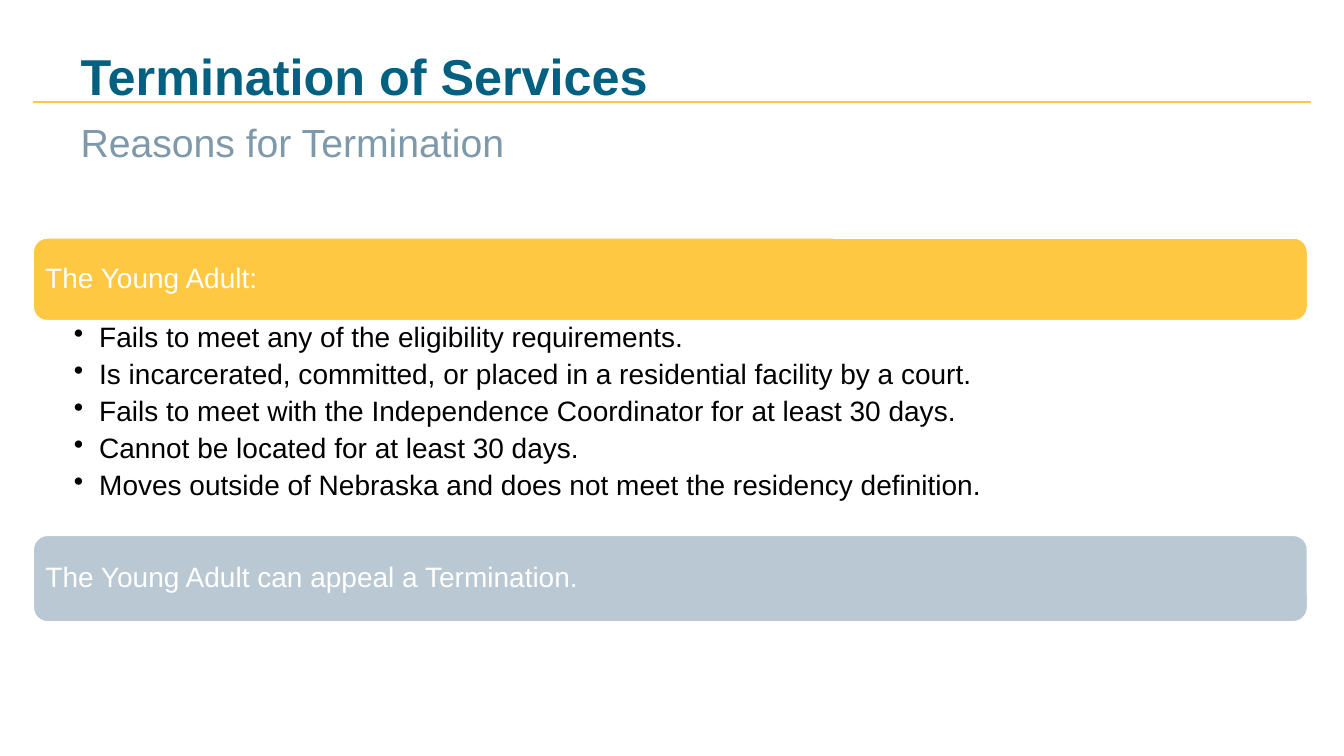
from dataclasses import dataclass

from lxml.etree import SubElement
from pptx import Presentation
from pptx.dml.color import RGBColor
from pptx.enum.shapes import MSO_CONNECTOR, MSO_SHAPE
from pptx.enum.text import MSO_ANCHOR, MSO_AUTO_SIZE, PP_ALIGN
from pptx.oxml.ns import qn
from pptx.util import Cm, Pt


@dataclass(frozen=True)
class Theme:
    font: str = "Arial"
    teal: str = "036080"
    slate: str = "7E99A9"
    gold: str = "FFC843"
    mist: str = "B9C8D3"
    white: str = "FFFFFF"
    black: str = "000000"
    head: int = 36
    sub: int = 28
    body: int = 20


THEME = Theme()
LEFT, WIDTH = 0.84, 32.11
REASONS = [
    "Fails to meet any of the eligibility requirements.",
    "Is incarcerated, committed, or placed in a residential facility by a court.",
    "Fails to meet with the Independence Coordinator for at least 30 days.",
    "Cannot be located for at least 30 days.",
    "Moves outside of Nebraska and does not meet the residency definition.",
]


def rgb(code):
    return RGBColor.from_string(code)


def write(para, text, size, color, bold=False):
    para.alignment = PP_ALIGN.LEFT
    para.line_spacing = 0.9
    run = para.add_run()
    run.text = text
    font = run.font
    font.name, font.size, font.bold = THEME.font, Pt(size), bold
    font.color.rgb = rgb(color)


def add_title(slide, text):
    title = slide.shapes.title
    title.left, title.top = Cm(1.78), Cm(1.02)
    title.width, title.height = Cm(32.08), Cm(1.93)
    frame = title.text_frame
    frame.auto_size = MSO_AUTO_SIZE.NONE
    frame.vertical_anchor = MSO_ANCHOR.MIDDLE
    write(frame.paragraphs[0], text, THEME.head, THEME.teal, True)


def add_box(slide, left, top, width, height):
    """Add a wrapping text box and return its text frame."""
    box = slide.shapes.add_textbox(Cm(left), Cm(top), Cm(width), Cm(height))
    box.text_frame.word_wrap = True
    return box.text_frame


def add_bar(slide, top, height, text, color):
    bar = slide.shapes.add_shape(
        MSO_SHAPE.ROUNDED_RECTANGLE, Cm(LEFT), Cm(top), Cm(WIDTH), Cm(height))
    bar.shadow.inherit = False
    bar.fill.solid()
    bar.fill.fore_color.rgb = rgb(color)
    bar.line.color.rgb = rgb(THEME.white)
    bar.line.width = Pt(1)
    frame = bar.text_frame
    frame.margin_left = frame.margin_right = Cm(0.2)
    frame.vertical_anchor = MSO_ANCHOR.MIDDLE
    write(frame.paragraphs[0], text, THEME.body, THEME.white)


def add_bullet(para):
    props = para._p.get_or_add_pPr()
    props.set("marL", str(Cm(0.64)))
    props.set("indent", str(-Cm(0.64)))
    SubElement(props, qn("a:buChar")).set("char", "•")


def add_list(slide, top, height, items):
    frame = add_box(slide, LEFT, top, WIDTH, height)
    frame.margin_left, frame.margin_right = Cm(1.02), Cm(0.4)
    frame.margin_top = frame.margin_bottom = Cm(0.08)
    for index, item in enumerate(items):
        para = frame.add_paragraph() if index else frame.paragraphs[0]
        add_bullet(para)
        para.space_after = Pt(4.8)
        write(para, item, THEME.body, THEME.black)


def add_rule(slide, top, right):
    rule = slide.shapes.add_connector(
        MSO_CONNECTOR.STRAIGHT, Cm(LEFT), Cm(top), Cm(right), Cm(top))
    rule.line.color.rgb = rgb(THEME.gold)
    rule.line.width = Pt(1.5)
    SubElement(rule._element.spPr, qn("a:effectLst"))


def main():
    deck = Presentation()
    deck.slide_width, deck.slide_height = Cm(33.87), Cm(19.05)
    slide = deck.slides.add_slide(deck.slide_layouts[5])
    add_title(slide, "Termination of Services")
    sub = add_box(slide, 1.78, 3, 32.08, 1.57)
    write(sub.paragraphs[0], "Reasons for Termination", THEME.sub, THEME.slate)
    add_bar(slide, 6, 2.08, "The Young Adult:", THEME.gold)
    add_list(slide, 8.08, 5.41, REASONS)
    add_bar(slide, 13.49, 2.18, "The Young Adult can appeal a Termination.", THEME.mist)
    add_rule(slide, 2.57, 33.05)
    deck.save("out.pptx")


if __name__ == "__main__":
    main()
